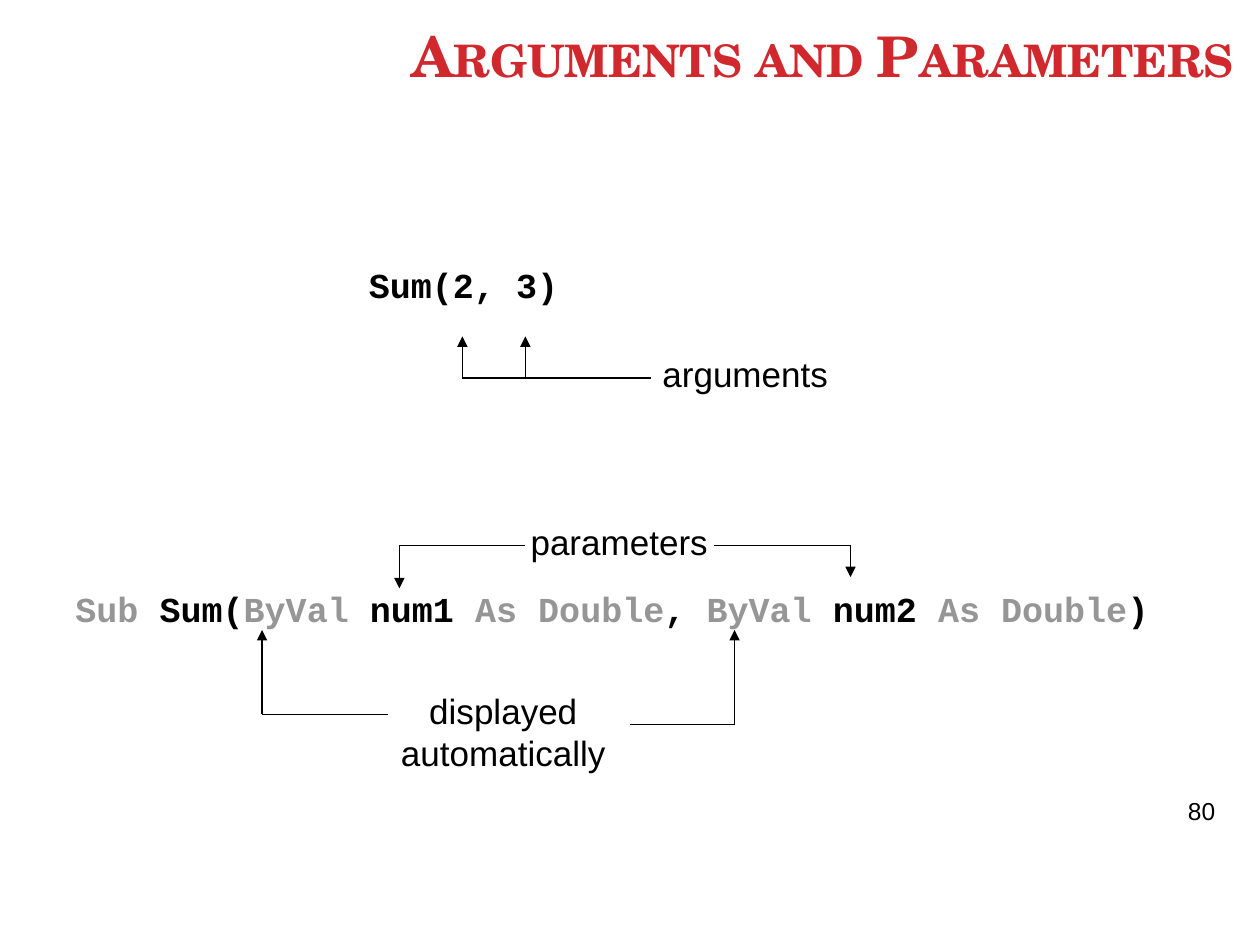
from lxml.etree import SubElement
from pptx import Presentation
from pptx.dml.color import RGBColor
from pptx.enum.shapes import MSO_CONNECTOR as Connector
from pptx.enum.text import MSO_ANCHOR as Anchor, PP_ALIGN as Align
from pptx.oxml.ns import qn
from pptx.util import Inches, Pt

COLORS = {"title": "D1282E", "text": "000000", "keyword": "969696"}

TITLE = ("Arguments and Parameters", (0.17, 0.14, 9.72, 0.61))
CODE_LINES = [
    ((2.83, 2.04, 3, 0.42), [("Sum(2, 3)", "text")]),
    ((0.5, 4.61, 9, 0.42), [
        ("Sub ", "keyword"), ("Sum(", "text"), ("ByVal", "keyword"),
        (" num1 ", "text"), ("As Double", "keyword"), (", ", "text"),
        ("ByVal", "keyword"), (" num2 ", "text"), ("As Double", "keyword"),
        (")", "text"),
    ]),
]
LABELS = [
    ("arguments", (5, 2.75, 1.83, 0.43)),
    ("parameters", (4.08, 4.08, 1.67, 0.43)),
    ("displayed automatically", (3.08, 5.42, 1.83, 0.77)),
]
PAGE_NUMBER = ("80", (9.33, 6.27, 0.67, 0.57))

ARROWS = [
    ((3.67, 3), (3.67, 2.67)),
    ((4.17, 3), (4.17, 2.67)),
    ((3.17, 4.33), (3.17, 4.33)),
    ((3.17, 4.33), (3.17, 4.67)),
    ((6.75, 4.33), (6.75, 4.58)),
    ((2.08, 5.67), (2.08, 5)),
    ((5.83, 5.75), (5.83, 5)),
]
BRANCHES = [
    ((3.67, 3), (5.17, 3)),
    ((3.17, 4.33), (4.17, 4.33)),
    ((5.67, 4.33), (6.75, 4.33)),
    ((2.08, 5.67), (3.08, 5.67)),
    ((5, 5.75), (5.83, 5.75)),
]


def add_text(page, place, spans, font, size, align=Align.LEFT, bold=False):
    box = page.shapes.add_textbox(*map(Inches, place))
    box.text_frame.word_wrap = True
    para = box.text_frame.paragraphs[0]
    para.alignment = align
    para.font.name, para.font.size, para.font.bold = font, Pt(size), bold
    for text, color in spans:
        span = para.add_run()
        span.text = text
        span.font.color.rgb = RGBColor.from_string(COLORS[color])
    return box


def add_line(page, start, end, arrow):
    line = page.shapes.add_connector(
        Connector.STRAIGHT, *map(Inches, start + end))
    line.line.color.rgb = RGBColor.from_string(COLORS["text"])
    line.line.width = Pt(0.75)
    if arrow:
        SubElement(line.line._get_or_add_ln(), qn("a:tailEnd"), type="triangle")
    SubElement(line._element.spPr, qn("a:effectLst"))


def main():
    """Build the slide that contrasts arguments with parameters."""
    deck = Presentation()
    deck.slide_width, deck.slide_height = Inches(10), Inches(7.5)
    page = deck.slides.add_slide(deck.slide_layouts[6])

    text, place = TITLE
    title = add_text(page, place, [(text, "title")], "TeX Gyre Schola", 32,
                     Align.RIGHT, bold=True)
    title.text_frame.vertical_anchor = Anchor.BOTTOM
    title.text_frame.paragraphs[0].runs[0]._r.get_or_add_rPr().set("cap", "small")

    for place, spans in CODE_LINES:
        add_text(page, place, spans, "Courier New", 20, bold=True)
    for text, place in LABELS:
        add_text(page, place, [(text, "text")], "Arial", 20, Align.CENTER)
    text, place = PAGE_NUMBER
    add_text(page, place, [(text, "text")], "Arial", 14)

    for lines, arrow in ((ARROWS, True), (BRANCHES, False)):
        for start, end in lines:
            add_line(page, start, end, arrow)
    deck.save("out.pptx")


if __name__ == "__main__":
    main()
